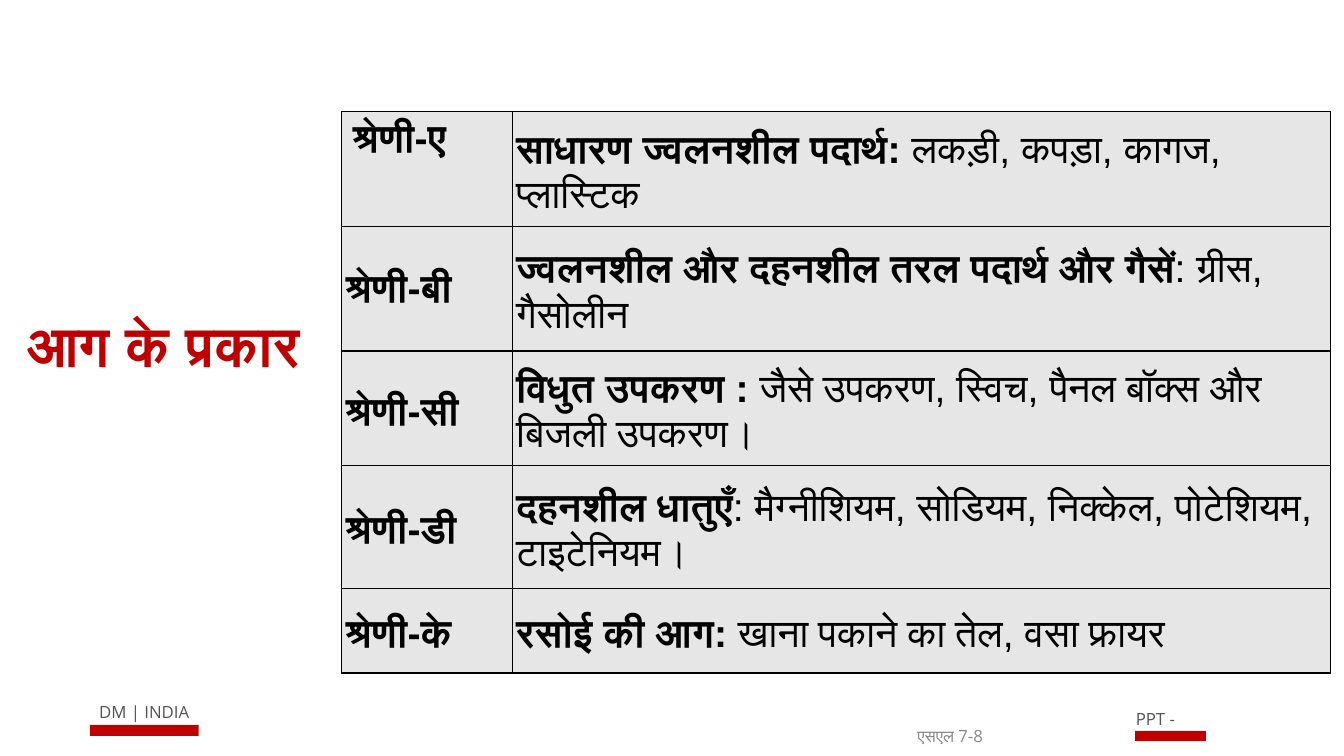
from dataclasses import dataclass

from lxml.etree import SubElement
from pptx import Presentation
from pptx.dml.color import RGBColor
from pptx.enum.shapes import MSO_SHAPE
from pptx.enum.text import MSO_ANCHOR, MSO_AUTO_SIZE, PP_ALIGN
from pptx.oxml.ns import qn
from pptx.util import Pt

PX = 9144  # 100 px to the inch


@dataclass(frozen=True)
class Theme:
    red: str = "C00000"
    black: str = "000000"
    dark_grey: str = "535353"
    grey: str = "888888"
    cell: str = "E7E6E6"
    body_font: str = "Open Sans"
    table_font: str = "Arial"
    title_size: int = 40
    table_size: int = 28
    small_size: int = 12


THEME = Theme()

FIRE_CLASSES = [
    # label, bold lead, detail, row height
    ("श्रेणी-ए", "साधारण ज्वलनशील पदार्थ:", " लकड़ी, कपड़ा, कागज, प्लास्टिक", 109),
    ("श्रेणी-बी", "ज्वलनशील और दहनशील तरल पदार्थ और गैसें", ": ग्रीस, गैसोलीन", 124),
    ("श्रेणी-सी", "विधुत उपकरण : ", "जैसे उपकरण, स्विच, पैनल बॉक्स और बिजली उपकरण।", 108),
    ("श्रेणी-डी", "दहनशील धातुएँ", ": मैग्नीशियम, सोडियम, निक्केल, पोटेशियम, टाइटेनियम।", 122),
    ("श्रेणी-के", "रसोई की आग:", " खाना पकाने का तेल, वसा फ्रायर", 84),
]


def px(*values):
    return [round(v * PX) for v in values]


def set_attrs(obj, values):
    for name, value in values.items():
        setattr(obj, name, value)


def set_margins(obj, across, down):
    across, down = px(across, down)
    set_attrs(obj, {"margin_left": across, "margin_right": across,
                    "margin_top": down, "margin_bottom": down})


def add_run(p, text, size, font, color, bold=False):
    r = p.add_run()
    r.text = text
    set_attrs(r.font, {"size": Pt(size), "name": font, "bold": bold})
    r.font.color.rgb = RGBColor.from_string(color)


def add_text(slide, box, text, size, color, margins=(10, 5), bold=False, **frame):
    sp = slide.shapes.add_textbox(*px(*box))
    tf = sp.text_frame
    set_margins(tf, *margins)
    align = frame.pop("align", PP_ALIGN.LEFT)
    set_attrs(tf, {"word_wrap": True, **frame})
    p = tf.paragraphs[0]
    p.alignment = align
    add_run(p, text, size, THEME.body_font, color, bold)


def add_footer_mark(slide, box, text, bar):
    """Small centred label with a red bar, placed from the label's corner."""
    left, top = box[:2]
    add_text(slide, box, text, THEME.small_size, THEME.dark_grey, (9, 9),
             align=PP_ALIGN.CENTER, auto_size=MSO_AUTO_SIZE.SHAPE_TO_FIT_TEXT)
    dx, dy, width, height = bar
    sp = slide.shapes.add_shape(MSO_SHAPE.RECTANGLE,
                                *px(left + dx, top + dy, width, height))
    sp.shadow.inherit = False
    sp.fill.solid()
    sp.fill.fore_color.rgb = RGBColor.from_string(THEME.red)
    sp.line.fill.background()


def style_cell(cell):
    tc_pr = cell._tc.get_or_add_tcPr()
    for side in ("lnL", "lnR", "lnT", "lnB"):
        ln = SubElement(tc_pr, qn(f"a:{side}"), w=str(Pt(1)))
        fill = SubElement(ln, qn("a:solidFill"))
        SubElement(fill, qn("a:srgbClr"), val=THEME.black)
    cell.fill.solid()
    cell.fill.fore_color.rgb = RGBColor.from_string(THEME.cell)


def add_fire_table(slide, box):
    table = slide.shapes.add_table(len(FIRE_CLASSES), 2, *px(*box)).table
    set_attrs(table, {"first_row": False, "horz_banding": False})
    label_width = 169
    for col, width in zip(table.columns, px(label_width, box[2] - label_width)):
        col.width = width

    for i, (label, lead, detail, height) in enumerate(FIRE_CLASSES):
        table.rows[i].height = px(height)[0]
        for j, runs in enumerate([[(label, True)], [(lead, True), (detail, False)]]):
            cell = table.cell(i, j)
            style_cell(cell)
            # The first label sits at the top of its cell
            is_first = i == j == 0
            set_margins(cell, *((11, 5) if is_first else (4, 3)))
            cell.vertical_anchor = MSO_ANCHOR.TOP if is_first else MSO_ANCHOR.MIDDLE
            p = cell.text_frame.paragraphs[0]
            p.line_spacing = 1.15 if j or i > 1 else 1.0
            for text, bold in runs:
                add_run(p, text, THEME.table_size, THEME.table_font, THEME.black, bold)


def main():
    prs = Presentation()
    prs.slide_width, prs.slide_height = px(1333, 750)
    slide = prs.slides.add_slide(prs.slide_layouts[6])

    # Footer marks
    add_footer_mark(slide, (24, 687, 238, 37), "DM | INDIA", (65, 32, 108, 11))
    add_footer_mark(slide, (1116, 694, 60, 37), "PPT -", (10, 31, 70, 10))

    # Classes of fire
    add_fire_table(slide, (339, 111, 981, 547))

    # Slide number and title
    add_text(slide, (900, 710, 233, 40), "एसएल 7-8", THEME.small_size, THEME.grey,
             vertical_anchor=MSO_ANCHOR.MIDDLE)
    add_text(slide, (17, 303, 339, 145), "आग के प्रकार", THEME.title_size, THEME.red,
             bold=True, auto_size=MSO_AUTO_SIZE.SHAPE_TO_FIT_TEXT)

    prs.save("out.pptx")


if __name__ == "__main__":
    main()
